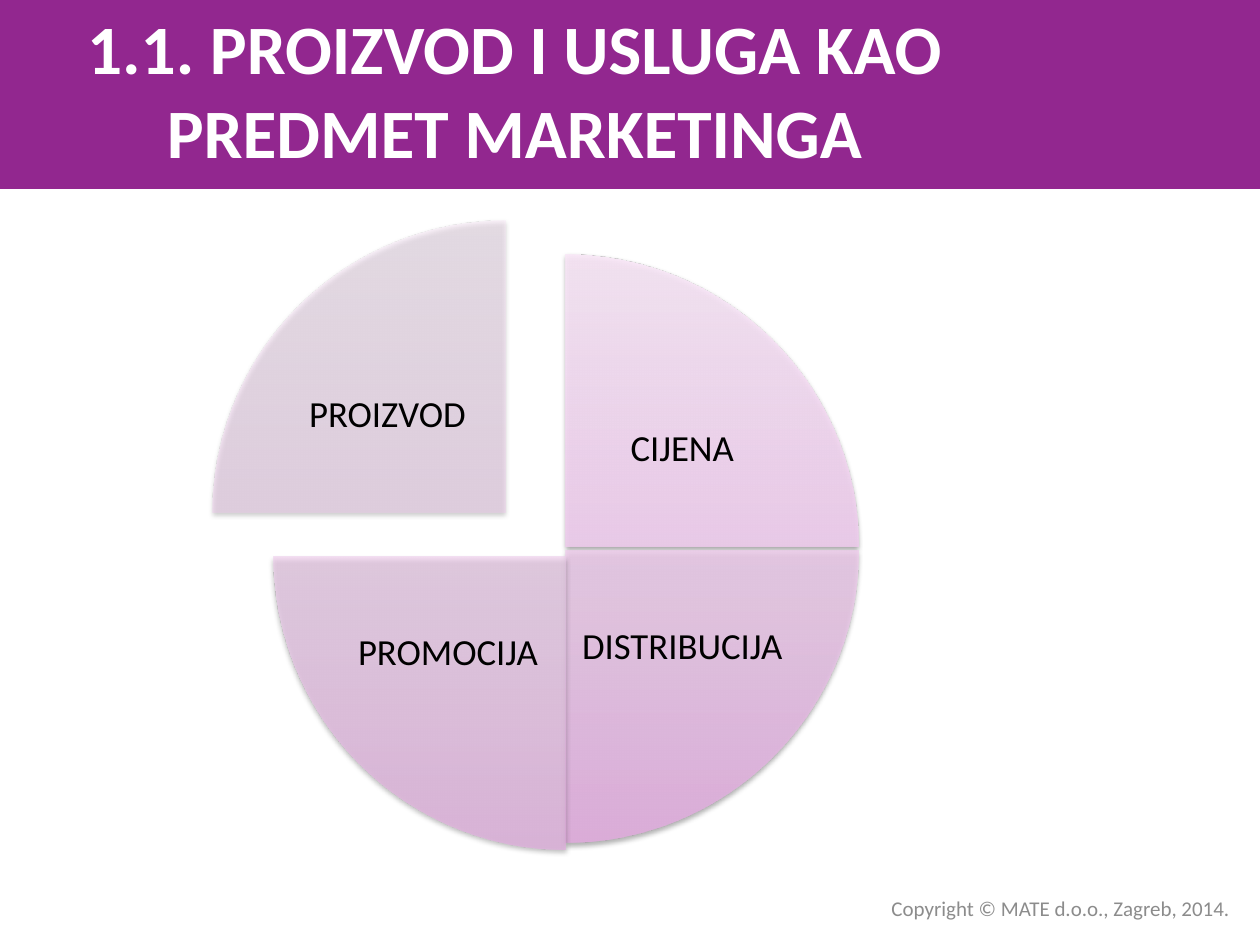
from lxml import etree
from pptx import Presentation
from pptx.dml.color import RGBColor
from pptx.enum.shapes import MSO_SHAPE
from pptx.enum.text import MSO_ANCHOR, MSO_AUTO_SIZE, PP_ALIGN
from pptx.oxml.ns import qn
from pptx.util import Inches, Pt

RECTANGLE, PIE = MSO_SHAPE.RECTANGLE, MSO_SHAPE.PIE
CENTER, RIGHT = PP_ALIGN.CENTER, PP_ALIGN.RIGHT
MIDDLE, NO_FIT = MSO_ANCHOR.MIDDLE, MSO_AUTO_SIZE.NONE

TITLE = "1.1. PROIZVOD I USLUGA KAO PREDMET MARKETINGA"
COPYRIGHT = "Copyright © MATE d.o.o., Zagreb, 2014."
FONT = "Calibri"
PURPLE, WHITE, BLACK, GREY = "92278F", "FFFFFF", "000000", "8C8C8C"
SLICE_STOPS = [(0, "E6AAE3"), (35, "ECC4EA"), (100, "F9E8F8")]
QUARTER, FULL_TURN, FIRST_START = 54, 216, 162
SLICES = [
    ("CIJENA", 0.48, 0.27, 90),
    ("DISTRIBUCIJA", 0.48, 0.3, 77),
    ("PROMOCIJA", 0.48, 0.35, 63),
    ("PROIZVOD", 0, 0, 50),
]


def color(hex_value):
    """Return the colour for a hex string."""
    return RGBColor.from_string(hex_value)


def set_attributes(target, formats):
    """Set every attribute named in a dict of format values."""
    for name, value in formats.items():
        setattr(target, name, value)


def place(shape, box):
    """Move a shape to a box given in inches."""
    sides = ("left", "top", "width", "height")
    set_attributes(shape, dict(zip(sides, map(Inches, box))))


def write(shape, text, size, hex_value, align=CENTER, bold=False, inset=0.1):
    """Write one formatted paragraph, vertically centred in the shape."""
    frame = shape.text_frame
    frame.text = text
    set_attributes(frame, {
        "word_wrap": True, "auto_size": NO_FIT, "vertical_anchor": MIDDLE,
        "margin_left": Inches(inset), "margin_right": Inches(inset),
        "margin_top": Inches(inset / 2), "margin_bottom": Inches(inset / 2),
    })
    paragraph = frame.paragraphs[0]
    paragraph.alignment = align
    font = paragraph.runs[0].font
    set_attributes(font, {"name": FONT, "size": Pt(size), "bold": bold})
    font.color.rgb = color(hex_value)
    return paragraph


def add_color_xml(parent, hex_value, opacity):
    """Add a colour element with an opacity in percent."""
    swatch = etree.SubElement(parent, qn("a:srgbClr"), val=hex_value)
    etree.SubElement(swatch, qn("a:alpha"), val=str(opacity * 1000))


def fill_gradient(shape, opacity):
    """Fill a slice with the translucent gradient, running upwards."""
    shape.fill.gradient()
    shape.fill.gradient_angle = 90
    stops = shape._element.spPr.find(f".//{qn('a:gsLst')}")
    for stop in list(stops):
        stops.remove(stop)
    for position, hex_value in SLICE_STOPS:
        stop = etree.SubElement(stops, qn("a:gs"), pos=str(position * 1000))
        add_color_xml(stop, hex_value, opacity)


def add_shadow(shape):
    """Give a slice a soft shadow straight below it."""
    shape.shadow.inherit = False
    effects = shape._element.spPr.find(qn("a:effectLst"))
    shadow = etree.SubElement(
        effects, qn("a:outerShdw"), blurRad=str(Pt(3.1)), dist=str(Pt(1.6)),
        dir="5400000", rotWithShape="0")
    add_color_xml(shadow, BLACK, 38)


def add_header(slide, box):
    """Draw the title band and set the title over it."""
    left, top, width, height = box
    band = slide.shapes.add_shape(RECTANGLE, *map(Inches, box))
    band.fill.solid()
    band.fill.fore_color.rgb = color(PURPLE)
    band.line.fill.background()
    band.shadow.inherit = False
    title = slide.shapes.title
    slide.shapes._spTree.append(title._element)
    place(title, (left, top + 0.08, width - 1.83, height - 0.25))
    write(title, TITLE, 39.6, WHITE, bold=True)


def add_marketing_mix(slide, box):
    """Draw the four quarter slices with their labels."""
    left, top, diameter = box
    for index, (name, shift_x, shift_y, opacity) in enumerate(SLICES):
        x, y = left + shift_x, top + shift_y
        start = (FIRST_START + index * QUARTER) % FULL_TURN
        pie = slide.shapes.add_shape(
            PIE, *map(Inches, (x, y, diameter, diameter)))
        pie.adjustments[0] = start
        pie.adjustments[1] = (start + QUARTER) % FULL_TURN
        fill_gradient(pie, opacity)
        pie.line.fill.background()
        add_shadow(pie)
        label_x = x + (2.39 if index < 2 else 0.53)
        label_y = y + (2.4 if index in (1, 2) else 0.86)
        label = slide.shapes.add_textbox(
            *map(Inches, (label_x, label_y, 1.71, 1.38)))
        paragraph = write(label, name, 21, BLACK, inset=0.03)
        set_attributes(paragraph, {"line_spacing": 0.9, "space_after": Pt(7.35)})


def add_copyright(slide, box):
    """Write the copyright line."""
    footer = slide.shapes.add_textbox(*map(Inches, box))
    write(footer, COPYRIGHT, 12, GREY, align=RIGHT)


def main():
    """Build the slide and save it."""
    deck = Presentation()
    deck.slide_width, deck.slide_height = Inches(10), Inches(7.5)
    slide = deck.slides.add_slide(deck.slide_layouts[5])
    add_header(slide, (0, 0, 10, 1.5))
    add_marketing_mix(slide, (1.69, 1.75, 4.64))
    add_copyright(slide, (4.69, 7.06, 5.17, 0.3))
    deck.save("out.pptx")


if __name__ == "__main__":
    main()
